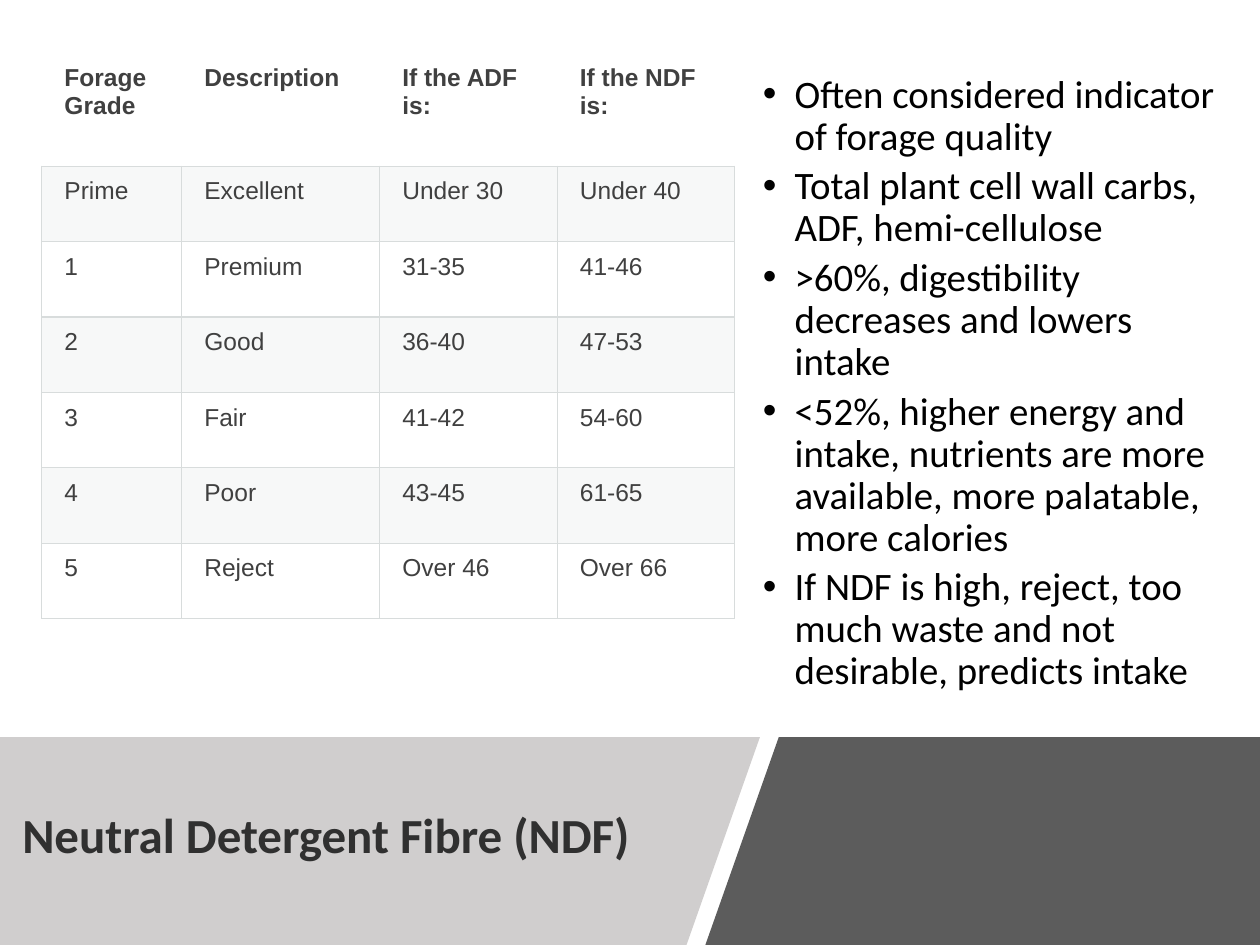
from lxml import etree
from pptx import Presentation
from pptx.dml.color import RGBColor
from pptx.enum.text import MSO_ANCHOR
from pptx.oxml.ns import qn
from pptx.util import Cm, Pt

MIDDLE = MSO_ANCHOR.MIDDLE
BLACK = RGBColor(0x00, 0x00, 0x00)
TITLE = RGBColor(0x30, 0x30, 0x30)
DARK = RGBColor(0x40, 0x40, 0x40)
BAND = RGBColor(0xD0, 0xCE, 0xCE)
STRIPE = RGBColor(0xD8, 0xDE, 0xDC)
RULE = RGBColor(0xD8, 0xDC, 0xDC)

GRADES = [
    ("Forage Grade", "Description", "If the ADF is:", "If the NDF is:"),
    ("Prime", "Excellent", "Under 30", "Under 40"),
    ("1", "Premium", "31-35", "41-46"),
    ("2", "Good", "36-40", "47-53"),
    ("3", "Fair", "41-42", "54-60"),
    ("4", "Poor", "43-45", "61-65"),
    ("5", "Reject", "Over 46", "Over 66"),
]
POINTS = [
    "Often considered indicator of forage quality",
    "Total plant cell wall carbs, ADF, hemi-cellulose",
    ">60%, digestibility decreases and lowers intake",
    "<52%, higher energy and intake, nutrients are more available, "
    "more palatable, more calories",
    "If NDF is high, reject, too much waste and not desirable, predicts intake",
]


def write(p, text, font="Calibri", size=14, color=DARK, bold=False,
          line=None, before=None, bullet=False):
    r = p.add_run()
    r.text = text
    r.font.name = font
    r.font.size = Pt(size)
    r.font.bold = bold
    r.font.color.rgb = color
    if line:
        p.line_spacing = line
    if before:
        p.space_before = Pt(before)
    if bullet:
        pPr = p._p.get_or_add_pPr()
        pPr.set("marL", str(Cm(0.96)))
        pPr.set("indent", str(-Cm(0.64)))
        etree.SubElement(pPr, qn("a:buFont")).set("typeface", "Arial")
        etree.SubElement(pPr, qn("a:buChar")).set("char", "•")


def set_alpha(parent, percent):
    color = parent.find(qn("a:solidFill"))[0]
    etree.SubElement(color, qn("a:alpha")).set("val", str(percent * 1000))


class Deck:
    def __init__(self, width, height):
        self.prs = Presentation()
        self.prs.slide_width = Cm(width)
        self.prs.slide_height = Cm(height)
        self.s = self.prs.slides.add_slide(self.prs.slide_layouts[6])

    def polygon(self, points, color, alpha=100):
        start, *rest = [(Cm(x), Cm(y)) for x, y in points]
        builder = self.s.shapes.build_freeform(*start)
        builder.add_line_segments(rest, close=True)
        sp = builder.convert_to_shape()
        sp.shadow.inherit = False
        sp.fill.solid()
        sp.fill.fore_color.rgb = color
        sp.line.fill.background()
        if alpha < 100:
            set_alpha(sp._element.spPr, alpha)

    def text(self, x, y, w, h, lines, **fmt):
        sp = self.s.shapes.add_textbox(Cm(x), Cm(y), Cm(w), Cm(h))
        tf = sp.text_frame
        tf.word_wrap = True
        tf.vertical_anchor = MIDDLE
        for i, line in enumerate(lines):
            p = tf.add_paragraph() if i else tf.paragraphs[0]
            write(p, line, **fmt)

    def border(self, cell, sides):
        tcPr = cell._tc.get_or_add_tcPr()
        for side in "LRTB":
            ln = etree.SubElement(tcPr, qn("a:ln" + side))
            if side in sides:
                ln.set("w", str(Pt(0.75)))
                fill = etree.SubElement(ln, qn("a:solidFill"))
                etree.SubElement(fill, qn("a:srgbClr")).set("val", str(RULE))
            else:
                etree.SubElement(ln, qn("a:noFill"))

    def table(self, x, y, widths, heights, rows):
        frame = self.s.shapes.add_table(len(rows), len(widths), Cm(x), Cm(y),
                                        Cm(sum(widths)), Cm(sum(heights)))
        tbl = frame.table
        tbl.first_row = tbl.horz_banding = False
        for column, width in zip(tbl.columns, widths):
            column.width = Cm(width)
        for i, (row, height, texts) in enumerate(zip(tbl.rows, heights, rows)):
            row.height = Cm(height)
            for cell, text in zip(row.cells, texts):
                cell.margin_left = Cm(0.46)
                cell.margin_right = Cm(0.13)
                cell.margin_top = cell.margin_bottom = Cm(0.23)
                write(cell.text_frame.paragraphs[0], text, font="Arial", bold=i == 0)
                self.border(cell, "LRTB" if i else "B")
                if i % 2:
                    cell.fill.solid()
                    cell.fill.fore_color.rgb = STRIPE
                    set_alpha(cell._tc.tcPr, 20)
                else:
                    cell.fill.background()

    def save(self):
        self.prs.save("out.pptx")


def main():
    width, height, top = 25.4, 19.05, 14.86
    deck = Deck(width, height)
    deck.polygon([(15.7, top), (width, top), (width, height), (14.22, height)],
                 DARK, alpha=85)
    deck.polygon([(0, top), (15.32, top), (13.84, height), (0, height)], BAND)
    deck.text(0.2, 15.37, 14.17, 3.05, ["Neutral Detergent Fibre (NDF)"],
              size=28, color=TITLE, bold=True, line=0.9)
    deck.text(14.81, 1.07, 10.16, 13.34, POINTS,
              size=22.2, color=BLACK, line=0.9, before=4.4, bullet=True)
    deck.table(0.84, 1.07, [2.82, 3.99, 3.58, 3.58], [2.28] + [1.52] * 6, GRADES)
    deck.save()


if __name__ == "__main__":
    main()
